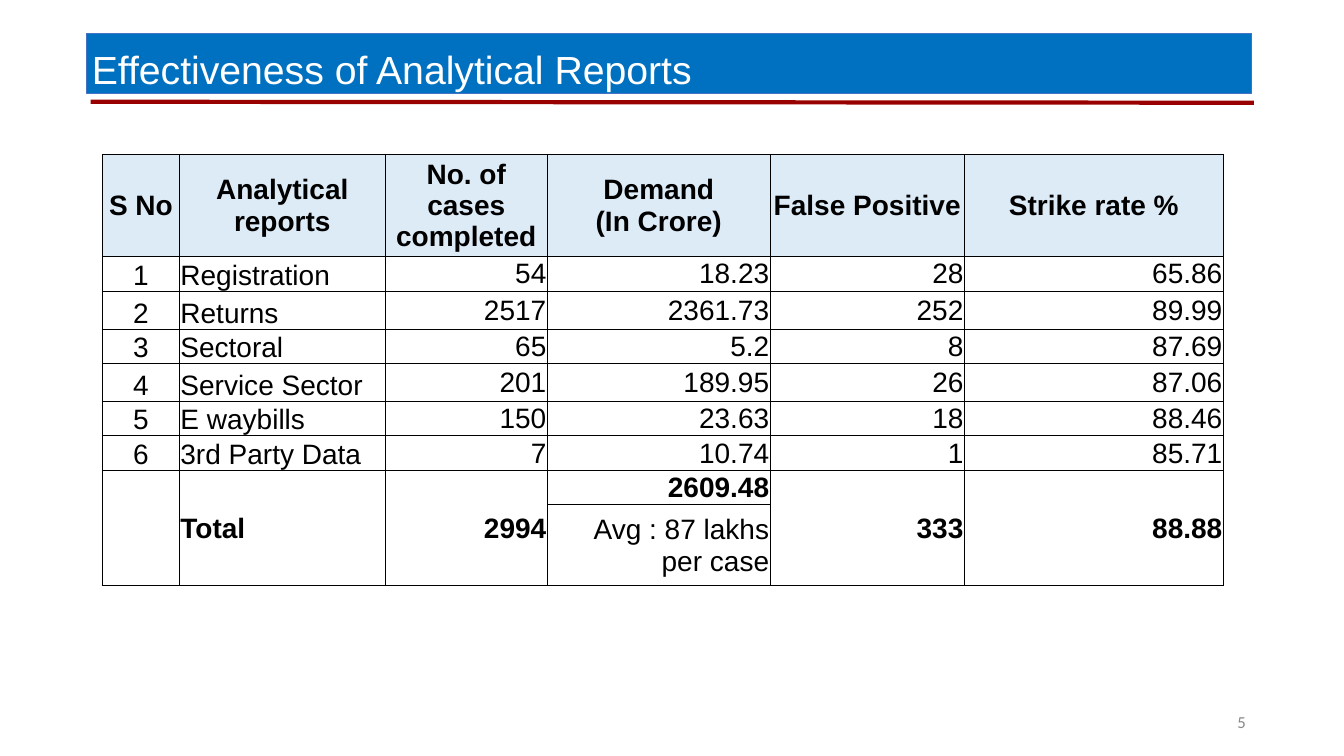
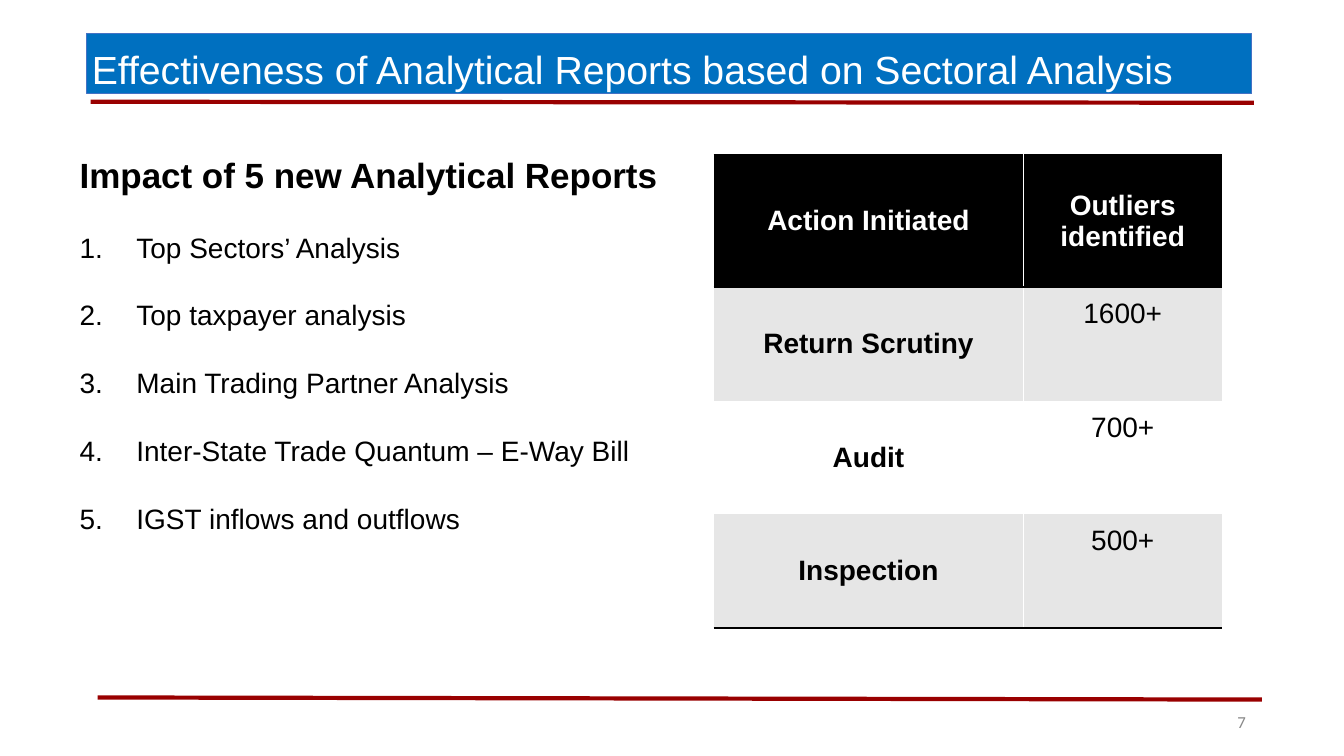
"""Build two slides on the effectiveness of analytical reports."""
from dataclasses import dataclass
from typing import Optional

from lxml.etree import SubElement
from pptx import Presentation
from pptx.dml.color import RGBColor
from pptx.enum.shapes import MSO_CONNECTOR
from pptx.enum.text import MSO_ANCHOR, MSO_AUTO_SIZE, PP_ALIGN
from pptx.oxml.ns import qn
from pptx.util import Pt

BLUE, BLUE_EDGE, RED = "0070C0", "4472C4", "990000"
BLACK, WHITE, GREY = "000000", "FFFFFF", "888888"
PALE_BLUE, PALE_GREY = "DDEBF7", "E6E6E6"

REPORT_HEADINGS = ["S No", "Analytical reports", "No. of cases completed",
                   "Demand\n(In Crore)", "False Positive", "Strike rate %"]
REPORT_ROWS = [
    ["1", "Registration", "54", "18.23", "28", "65.86"],
    ["2", "Returns", "2517", "2361.73", "252", "89.99"],
    ["3", "Sectoral", "65", "5.2", "8", "87.69"],
    ["4", "Service Sector", "201", "189.95", "26", "87.06"],
    ["5", "E waybills", "150", "23.63", "18", "88.46"],
    ["6", "3rd Party Data", "7", "10.74", "1", "85.71"],
]
TOTAL_ROW = ["", "Total", "2994", "2609.48", "333", "88.88"]
AVERAGE = "Avg : 87 lakhs per case"
DEMAND_COLUMN = 3
REPORT_ALIGNMENTS = [PP_ALIGN.CENTER, PP_ALIGN.LEFT] + [PP_ALIGN.RIGHT] * 4

IMPACT_HEADING = "Impact of 5 new Analytical Reports"
NEW_REPORTS = ["Top Sectors’ Analysis", "Top taxpayer analysis",
               "Main Trading Partner Analysis",
               "Inter-State Trade Quantum – E-Way Bill",
               "IGST inflows and outflows"]
ACTION_HEADINGS = ["Action Initiated", "Outliers identified"]
ACTIONS = [("Return Scrutiny", "1600+"), ("Audit", "700+"), ("Inspection", "500+")]


@dataclass(frozen=True)
class Box:
    """A rectangle in points."""
    left: float
    top: float
    width: float
    height: float


@dataclass(frozen=True)
class Rule:
    """A straight red line in points."""
    start_x: float
    start_y: float
    end_x: float
    end_y: float


@dataclass(frozen=True)
class Border:
    """A cell edge."""
    color: str
    width: float


@dataclass(frozen=True)
class CellStyle:
    """The look of a table cell; edges run left, right, top, bottom."""
    edges: tuple[Optional[Border], ...]
    margin: float
    bottom_margin: float
    fill: str = WHITE
    color: str = BLACK
    bold: bool = False
    alignment: PP_ALIGN = PP_ALIGN.CENTER
    anchor: MSO_ANCHOR = MSO_ANCHOR.MIDDLE


BANNER = Box(62, 23.8, 832, 43.2)
PAGE_NUMBER = Box(843.5, 506, 50, 19.5)
BODY = Box(49.7, 109.4, 451.4, 396.7)
HEADER_RULE = Rule(64.8, 72.7, 895.7, 73.4)
FOOTER_RULE = Rule(69.8, 498.2, 901.4, 499.7)


def rgb(color: str) -> RGBColor:
    """Turn a hex string into a colour."""
    return RGBColor.from_string(color)


def place(shape, box: Box) -> None:
    """Move and size a shape."""
    shape.left, shape.top = Pt(box.left), Pt(box.top)
    shape.width, shape.height = Pt(box.width), Pt(box.height)


def set_margins(frame, margin: float) -> None:
    """Give a text frame equal margins on all sides."""
    frame.margin_left = frame.margin_right = Pt(margin)
    frame.margin_top = frame.margin_bottom = Pt(margin)


def add_text(paragraph, text: str, size: float, color: str = BLACK,
             bold: bool = False, font: str = "Arial") -> None:
    """Add a run for each line of the text."""
    for number, line in enumerate(text.split("\n")):
        if number:
            paragraph.add_line_break()
        run = paragraph.add_run()
        run.text = line
        run.font.name, run.font.size, run.font.bold = font, Pt(size), bold
        run.font.color.rgb = rgb(color)


def add_rule(slide, rule: Rule) -> None:
    """Draw a red line without a shadow."""
    connector = slide.shapes.add_connector(
        MSO_CONNECTOR.STRAIGHT, Pt(rule.start_x), Pt(rule.start_y),
        Pt(rule.end_x), Pt(rule.end_y))
    connector.line.color.rgb = rgb(RED)
    connector.line.width = Pt(3)
    SubElement(connector._element.spPr, qn("a:effectLst"))


def add_slide(presentation, layout_index: int, title: str, page: str):
    """Add a slide with its banner title, header line and page number."""
    slide = presentation.slides.add_slide(presentation.slide_layouts[layout_index])
    banner = slide.shapes.title
    place(banner, BANNER)
    banner.fill.solid()
    banner.fill.fore_color.rgb = rgb(BLUE)
    banner.line.color.rgb = rgb(BLUE_EDGE)
    banner.line.width = Pt(0.5)
    frame = banner.text_frame
    frame.auto_size, frame.vertical_anchor = MSO_AUTO_SIZE.NONE, MSO_ANCHOR.TOP
    set_margins(frame, 3.6)
    paragraph = frame.paragraphs[0]
    paragraph.alignment, paragraph.line_spacing = PP_ALIGN.LEFT, 1.15
    add_text(paragraph, title, 28, WHITE)

    box = PAGE_NUMBER
    number = slide.shapes.add_textbox(Pt(box.left), Pt(box.top),
                                      Pt(box.width), Pt(box.height))
    frame = number.text_frame
    frame.word_wrap, frame.vertical_anchor = True, MSO_ANCHOR.MIDDLE
    set_margins(frame, 3.6)
    frame.paragraphs[0].alignment = PP_ALIGN.RIGHT
    add_text(frame.paragraphs[0], page, 12, GREY, font="Calibri")
    add_rule(slide, HEADER_RULE)
    return slide


def add_table(slide, left: float, top: float, widths: list[float],
              heights: list[float]):
    """Add a plain table with the given columns and rows."""
    table = slide.shapes.add_table(
        len(heights), len(widths), Pt(left), Pt(top),
        Pt(sum(widths)), Pt(sum(heights))).table
    table.first_row = table.horz_banding = False
    for column, width in zip(table.columns, widths):
        column.width = Pt(width)
    for row, height in zip(table.rows, heights):
        row.height = Pt(height)
    return table


def fill_cell(cell, text: str, style: CellStyle) -> None:
    """Format a cell and write its text."""
    properties = cell._tc.get_or_add_tcPr()
    for tag, edge in zip(("a:lnL", "a:lnR", "a:lnT", "a:lnB"), style.edges):
        line = SubElement(properties, qn(tag))
        if edge is None:
            SubElement(line, qn("a:noFill"))
            continue
        line.set("w", str(Pt(edge.width)))
        solid = SubElement(line, qn("a:solidFill"))
        SubElement(solid, qn("a:srgbClr")).set("val", edge.color)
    cell.fill.solid()
    cell.fill.fore_color.rgb = rgb(style.fill)
    cell.margin_left = cell.margin_right = cell.margin_top = Pt(style.margin)
    cell.margin_bottom = Pt(style.bottom_margin)
    cell.vertical_anchor = style.anchor
    paragraph = cell.text_frame.paragraphs[0]
    paragraph.alignment = style.alignment
    if text:
        add_text(paragraph, text, 20, style.color, style.bold)


def build_reports_slide(presentation) -> None:
    """Show the results of each analytical report."""
    slide = add_slide(presentation, 5, "Effectiveness of Analytical Reports", "5")
    table = add_table(slide, 73.2, 110.2, [55, 147, 115.8, 159.2, 138.7, 185],
                      [72, 25, 27.2, 24.3, 26.6, 24.6, 24.5, 24.6, 57.8])
    edges = (Border(BLACK, 0.5),) * 4
    rows = [REPORT_HEADINGS, *REPORT_ROWS, TOTAL_ROW, [""] * len(TOTAL_ROW)]
    total_index = len(rows) - 2
    rows[-1][DEMAND_COLUMN] = AVERAGE
    for row_index, row in enumerate(rows):
        is_heading = row_index == 0
        for column_index, text in enumerate(row):
            is_low = 0 < row_index < total_index and column_index < 2
            style = CellStyle(
                edges, 0.7, 0,
                fill=PALE_BLUE if is_heading else WHITE,
                bold=row_index in (0, total_index),
                alignment=(PP_ALIGN.CENTER if is_heading
                           else REPORT_ALIGNMENTS[column_index]),
                anchor=MSO_ANCHOR.BOTTOM if is_low else MSO_ANCHOR.MIDDLE)
            fill_cell(table.cell(row_index, column_index), text, style)
    for column_index in range(len(TOTAL_ROW)):
        if column_index != DEMAND_COLUMN:
            table.cell(total_index, column_index).merge(
                table.cell(total_index + 1, column_index))


def add_impact_list(slide) -> None:
    """Write the heading and the numbered list of new reports."""
    body = slide.placeholders[1]
    place(body, BODY)
    frame = body.text_frame
    frame.auto_size, frame.vertical_anchor = MSO_AUTO_SIZE.NONE, MSO_ANCHOR.TOP
    for index, text in enumerate([IMPACT_HEADING, *NEW_REPORTS]):
        is_heading = index == 0
        paragraph = frame.paragraphs[0] if is_heading else frame.add_paragraph()
        paragraph.alignment = PP_ALIGN.LEFT
        paragraph.line_spacing = 0.9 if is_heading else 1.6
        paragraph.space_before, paragraph.space_after = Pt(10), Pt(0)
        properties = paragraph._p.get_or_add_pPr()
        indent = Pt(0 if is_heading else 40.5)
        properties.set("marL", str(indent))
        properties.set("indent", str(-indent))
        if is_heading:
            SubElement(properties, qn("a:buNone"))
        else:
            SubElement(properties, qn("a:buAutoNum")).set("type", "arabicPeriod")
        add_text(paragraph, text, 25 if is_heading else 20, bold=is_heading)


def build_sectors_slide(presentation) -> None:
    """Show the new sectoral reports and the actions that followed."""
    slide = add_slide(
        presentation, 1,
        "Effectiveness of Analytical Reports based on Sectoral Analysis", "7")
    add_impact_list(slide)
    table = add_table(slide, 509.8, 111, [221.2, 142], [94, 81.2, 81.2, 81.2])
    strong, divider = Border(BLACK, 2), Border(WHITE, 1)
    rows = [ACTION_HEADINGS, *ACTIONS]
    for row_index, row in enumerate(rows):
        is_heading = row_index == 0
        top = strong if row_index < 2 else None
        bottom = strong if row_index in (0, len(rows) - 1) else None
        for column_index, text in enumerate(row):
            is_label = column_index == 0
            sides = (None, divider) if is_label else (divider, None)
            style = CellStyle(
                (*sides, top, bottom), 8, 8,
                fill=BLACK if is_heading else PALE_GREY if row_index % 2 else WHITE,
                color=WHITE if is_heading else BLACK,
                bold=is_heading or is_label,
                anchor=(MSO_ANCHOR.MIDDLE if is_heading or is_label
                        else MSO_ANCHOR.TOP))
            fill_cell(table.cell(row_index, column_index), text, style)
    add_rule(slide, FOOTER_RULE)


def main() -> None:
    """Build and save the presentation."""
    presentation = Presentation()
    presentation.slide_width, presentation.slide_height = Pt(960), Pt(540)
    build_reports_slide(presentation)
    build_sectors_slide(presentation)
    presentation.save("out.pptx")


if __name__ == "__main__":
    main()
